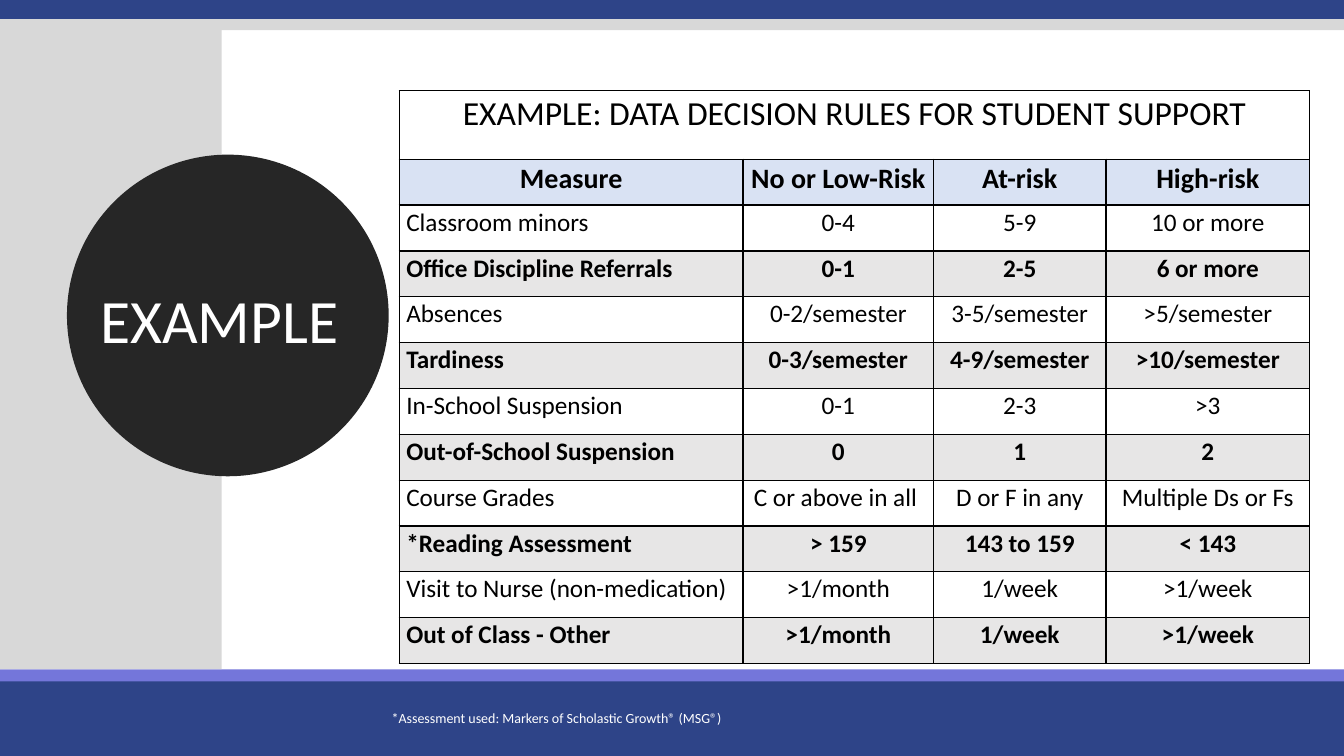
from dataclasses import dataclass
from lxml.etree import SubElement as Sub
from pptx import Presentation
from pptx.dml.color import RGBColor as RGB
from pptx.enum.shapes import MSO_SHAPE as Kind
from pptx.enum.text import MSO_ANCHOR as Anchor, MSO_AUTO_SIZE as Fit, PP_ALIGN as Align
from pptx.oxml.ns import qn
from pptx.util import Inches, Pt


@dataclass(frozen=True)
class Theme:
    font: str = "Calibri"
    navy: str = "2E4488"
    violet: str = "7476DA"
    gray: str = "D8D8D8"
    dark: str = "262626"
    white: str = "FFFFFF"
    black: str = "000000"
    head: str = "D9E2F3"
    band: str = "E7E6E6"
    label: int = 44
    title: int = 24
    column: int = 20
    body: int = 18
    note: int = 10


LOOK = Theme()

BARS = [
    (0, 6.7, 13.33, 0.8, LOOK.navy),
    (0, 6.64, 13.33, 0.12, LOOK.violet),
    (0, -0.03, 13.33, 0.22, LOOK.navy),
    (0, 0.19, 13.33, 0.11, LOOK.gray),
    (0, 0.3, 2.2, 6.34, LOOK.gray),
]
TITLE = "EXAMPLE: DATA DECISION RULES FOR STUDENT SUPPORT"
HEADS = ["Measure", "No or Low-Risk", "At-risk", "High-risk"]
RULES = [
    ["Classroom minors", "0-4", "5-9", "10 or more"],
    ["Office Discipline Referrals", "0-1", "2-5", "6 or more"],
    ["Absences", "0-2/semester", "3-5/semester", ">5/semester"],
    ["Tardiness", "0-3/semester", "4-9/semester", ">10/semester"],
    ["In-School Suspension", "0-1", "2-3", ">3"],
    ["Out-of-School Suspension", "0", "1", "2"],
    ["Course Grades", "C or above in all ", "D or F in any", "Multiple Ds or Fs"],
    ["*Reading Assessment", "> 159", "143 to 159", "< 143"],
    ["Visit to Nurse (non-medication)", ">1/month", "1/week", ">1/week"],
    ["Out of Class - Other", ">1/month", "1/week", ">1/week"],
]
WIDTHS = [3.41, 1.89, 1.71, 2.02]
TALL, ROW = 0.68, 0.455


def shape(slide, kind, x, y, w, h, color):
    item = slide.shapes.add_shape(kind, Inches(x), Inches(y), Inches(w), Inches(h))
    item.shadow.inherit = False
    item.fill.solid()
    item.fill.fore_color.rgb = RGB.from_string(color)
    item.line.fill.background()
    return item


def write(frame, text, size, color, bold=False, align=Align.CENTER, space=1.0):
    para = frame.paragraphs[0]
    para.text = text
    para.alignment = align
    para.line_spacing = space
    para.font.name = LOOK.font
    para.font.size = Pt(size)
    para.font.bold = bold
    para.font.color.rgb = RGB.from_string(color)


def label(slide, x, y, w, h, text, size, space=1.0, anchor=Anchor.TOP):
    frame = slide.shapes.add_textbox(Inches(x), Inches(y), Inches(w), Inches(h)).text_frame
    frame.word_wrap = True
    frame.auto_size = Fit.NONE
    frame.vertical_anchor = anchor
    write(frame, text, size, LOOK.white, space=space)


def border(cell):
    props = cell._tc.get_or_add_tcPr()
    for spot, side in enumerate(("lnL", "lnR", "lnT", "lnB")):
        line = Sub(props, qn(f"a:{side}"), w=str(Pt(1)))
        fill = Sub(line, qn("a:solidFill"))
        Sub(fill, qn("a:srgbClr"), val=LOOK.black)
        props.insert(spot, line)


def style(cell, color):
    cell.margin_left = cell.margin_right = Inches(0.07)
    cell.margin_top = cell.margin_bottom = 0
    if color:
        cell.fill.solid()
        cell.fill.fore_color.rgb = RGB.from_string(color)
    else:
        cell.fill.background()
    border(cell)


def fill_row(cells, texts, size, bold, color, first):
    for col, (cell, text) in enumerate(zip(cells, texts)):
        style(cell, color)
        align = Align.CENTER if col else first
        write(cell.text_frame, text, size, LOOK.black, bold, align, 1.07)


def grid(slide):
    count = len(RULES) + 2
    high = TALL + ROW * (count - 1)
    table = slide.shapes.add_table(
        count, len(WIDTHS), Inches(3.96), Inches(0.9), Inches(sum(WIDTHS)), Inches(high)
    ).table
    table.first_row = table.horz_banding = False
    for col, width in zip(table.columns, WIDTHS):
        col.width = Inches(width)
    for num, row in enumerate(table.rows):
        row.height = Inches(ROW if num else TALL)
    top, head, *rest = table.rows
    for cell in top.cells:
        style(cell, None)
    table.cell(0, 0).merge(table.cell(0, len(WIDTHS) - 1))
    write(table.cell(0, 0).text_frame, TITLE, LOOK.title, LOOK.black, space=1.07)
    fill_row(head.cells, HEADS, LOOK.column, True, LOOK.head, Align.CENTER)
    for num, (row, texts) in enumerate(zip(rest, RULES)):
        odd = num % 2 == 1
        fill_row(row.cells, texts, LOOK.body, odd, LOOK.band if odd else None, Align.LEFT)


def main():
    deck = Presentation()
    deck.slide_width, deck.slide_height = Inches(13.33), Inches(7.5)
    slide = deck.slides.add_slide(deck.slide_layouts[6])
    for bar in BARS:
        shape(slide, Kind.RECTANGLE, *bar)
    disc = shape(slide, Kind.OVAL, 0.76, 1.63, 3, 3, LOOK.dark)
    disc.line.color.rgb = RGB.from_string(LOOK.dark)
    disc.line.width = Pt(13.75)
    label(slide, 0.87, 2.2, 2.75, 2.01, "EXAMPLE ", LOOK.label, 0.9, Anchor.MIDDLE)
    grid(slide)
    label(slide, 3.62, 6.99, 3.83, 0.27,
          "*Assessment used: Markers of Scholastic Growth® (MSG®) ", LOOK.note)
    deck.save("out.pptx")


if __name__ == "__main__":
    main()
